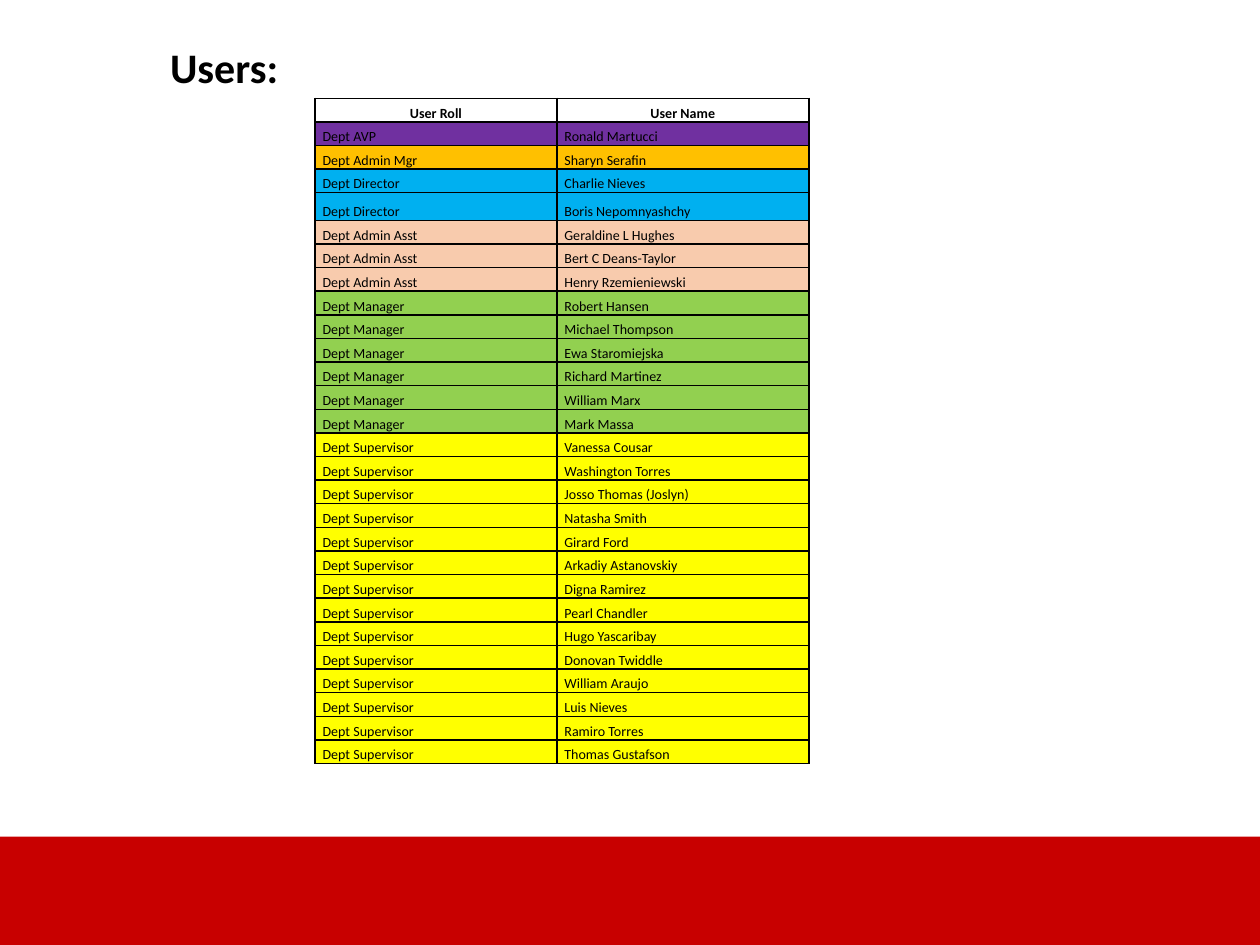
from lxml import etree
from pptx import Presentation
from pptx import util as u
from pptx.dml.color import RGBColor
from pptx.enum import shapes, text
from pptx.oxml.ns import qn

COLORS = {
    "text": "000000",
    "band": "C80000",
    "Dept AVP": "7030A0",
    "Dept Admin Mgr": "FFC000",
    "Dept Director": "00B0F0",
    "Dept Admin Asst": "F8CBAD",
    "Dept Manager": "92D050",
    "Dept Supervisor": "FFFF00",
}

USERS_BY_ROLE = {
    "Dept AVP": ["Ronald Martucci"],
    "Dept Admin Mgr": ["Sharyn Serafin"],
    "Dept Director": ["Charlie Nieves", "Boris Nepomnyashchy"],
    "Dept Admin Asst": ["Geraldine L Hughes", "Bert C Deans-Taylor", "Henry Rzemieniewski"],
    "Dept Manager": [
        "Robert Hansen", "Michael Thompson", "Ewa Staromiejska",
        "Richard Martinez", "William Marx", "Mark Massa",
    ],
    "Dept Supervisor": [
        "Vanessa Cousar", "Washington Torres", "Josso Thomas (Joslyn)", "Natasha Smith",
        "Girard Ford", "Arkadiy Astanovskiy", "Digna Ramirez", "Pearl Chandler",
        "Hugo Yascaribay", "Donovan Twiddle", "William Araujo", "Luis Nieves",
        "Ramiro Torres", "Thomas Gustafson",
    ],
}


def rgb(name):
    return RGBColor.from_string(COLORS[name])


def write(frame, words, size=8, bold=False, align=text.PP_ALIGN.LEFT, after=0):
    paragraph = frame.paragraphs[0]
    paragraph.alignment = align
    paragraph.line_spacing = 1.07
    paragraph.space_after = u.Pt(after)
    run = paragraph.add_run()
    run.text = words
    run.font.name = "Calibri"
    run.font.size = u.Pt(size)
    run.font.bold = bold
    run.font.color.rgb = rgb("text")


class SlideBuilder:
    GRID = u.Inches(0.25)

    def __init__(self, deck):
        self.slide = deck.slides.add_slide(deck.slide_layouts[5])

    def box(self, *cells):
        return [round(cell * self.GRID) for cell in cells]

    def band(self, *cells):
        band = self.slide.shapes.add_shape(shapes.MSO_SHAPE.RECTANGLE, *self.box(*cells))
        band.shadow.inherit = False
        band.fill.solid()
        band.fill.fore_color.rgb = rgb("band")
        band.line.fill.background()

    def title(self, words, *cells):
        title = self.slide.shapes.title
        title.left, title.top, title.width, title.height = self.box(*cells)
        frame = title.text_frame
        frame.word_wrap = False
        frame.auto_size = text.MSO_AUTO_SIZE.SHAPE_TO_FIT_TEXT
        frame.vertical_anchor = text.MSO_ANCHOR.TOP
        write(frame, words, size=24, bold=True, after=8)

    def border(self, cell):
        properties = cell._tc.get_or_add_tcPr()
        for side in ("lnL", "lnR", "lnT", "lnB"):
            line = etree.SubElement(properties, qn(f"a:{side}"), w=str(u.Pt(1)))
            fill = etree.SubElement(line, qn("a:solidFill"))
            etree.SubElement(fill, qn("a:srgbClr"), val=COLORS["text"])

    def cell(self, cell, words, fill=None, **style):
        cell.margin_left = cell.margin_right = u.Inches(0.06)
        cell.margin_top = cell.margin_bottom = 0
        cell.vertical_anchor = text.MSO_ANCHOR.BOTTOM
        self.border(cell)
        if fill:
            cell.fill.solid()
            cell.fill.fore_color.rgb = rgb(fill)
        else:
            cell.fill.background()
        write(cell.text_frame, words, **style)

    def table(self, header, records, left, top, widths, row, tall_rows):
        heights = [tall_rows.get(index, row) for index in range(len(records) + 1)]
        place = self.box(left, top, sum(widths), sum(heights))
        table = self.slide.shapes.add_table(len(heights), len(widths), *place).table
        for column, width in zip(table.columns, self.box(*widths)):
            column.width = width
        for line, height in zip(table.rows, self.box(*heights)):
            line.height = height
        for column, words in enumerate(header):
            self.cell(table.cell(0, column), words, bold=True, align=text.PP_ALIGN.CENTER)
        for index, record in enumerate(records, start=1):
            for column, words in enumerate(record):
                self.cell(table.cell(index, column), words, fill=record[0])


def main():
    deck = Presentation()
    deck.slide_width, deck.slide_height = u.Inches(10), u.Inches(7.5)
    builder = SlideBuilder(deck)
    builder.band(0, 26.56, 40, 3.44)
    builder.title("Users:", 5, 1, 4.28, 2.12)
    users = [(role, name) for role, names in USERS_BY_ROLE.items() for name in names]
    builder.table(("User Roll", "User Name"), users, left=10, top=3.12,
                  widths=(7.68, 8), row=0.75, tall_rows={4: 0.88})
    deck.save("out.pptx")


if __name__ == "__main__":
    main()
